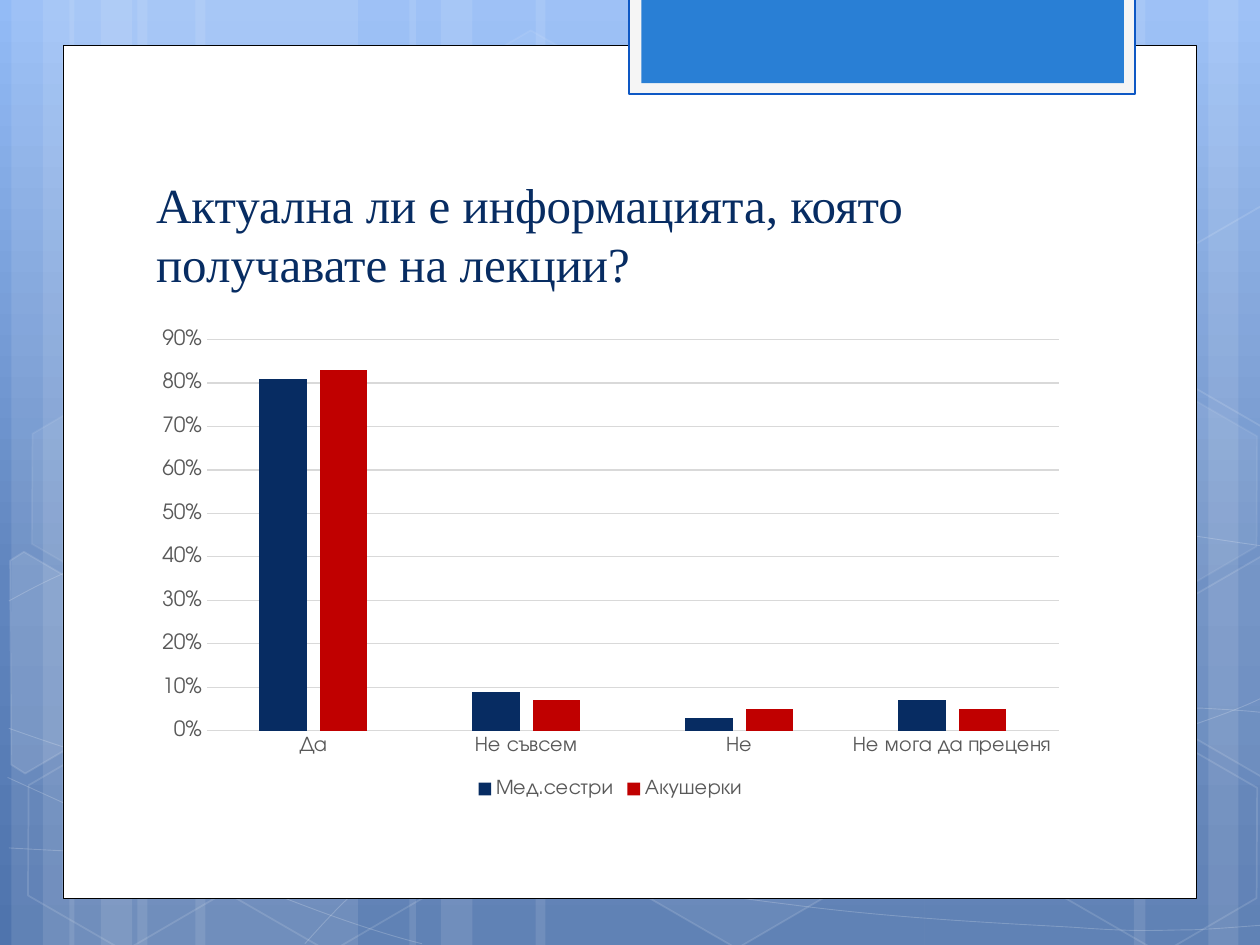
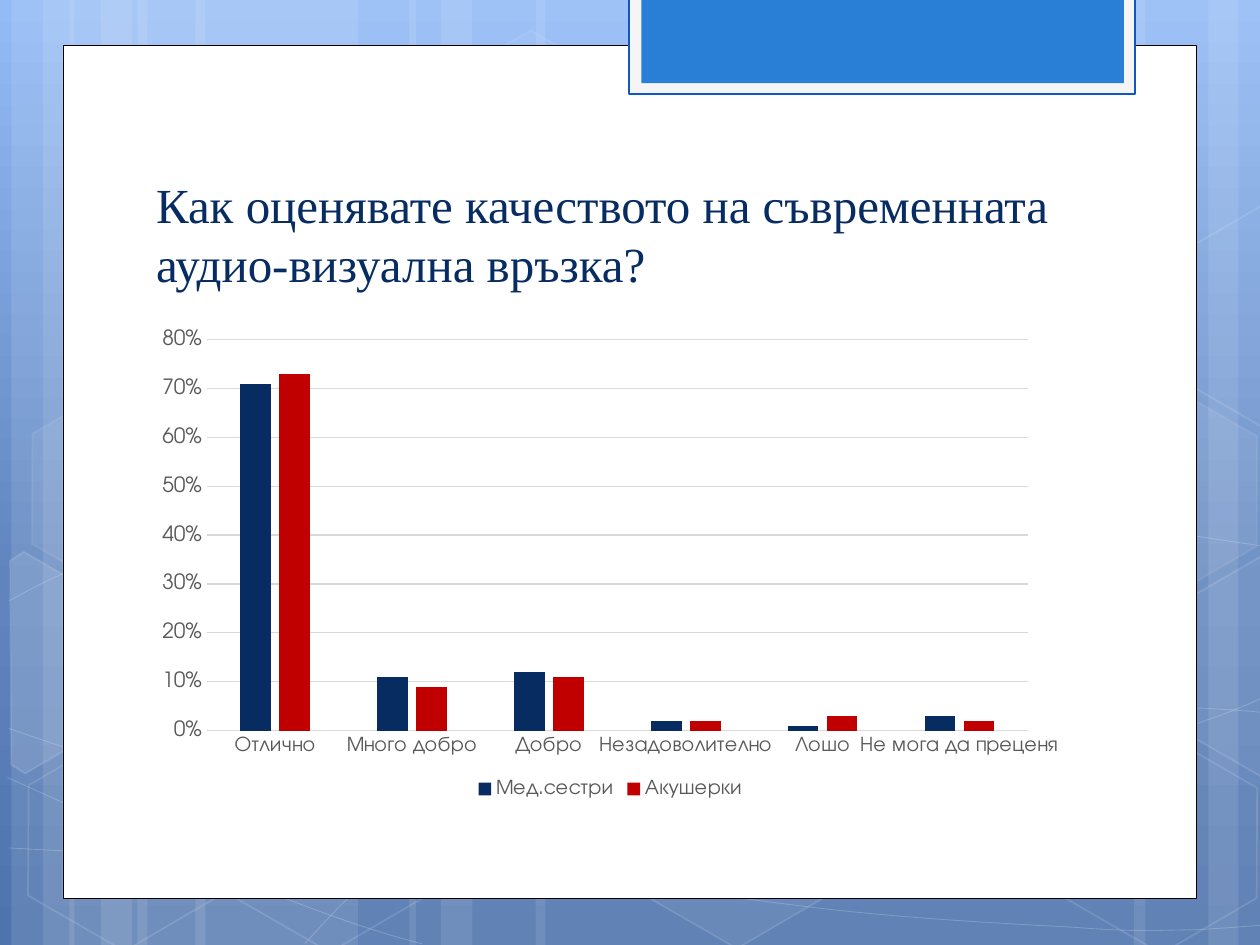
from copy import deepcopy
from dataclasses import dataclass
from typing import Optional

from pptx import Presentation
from pptx.chart.data import CategoryChartData
from pptx.dml.color import RGBColor
from pptx.enum.chart import XL_CHART_TYPE as ChartType
from pptx.enum.chart import XL_LEGEND_POSITION as LegendPosition
from pptx.enum.chart import XL_TICK_MARK as TickMark
from pptx.enum.shapes import MSO_SHAPE as Preset
from pptx.enum.text import MSO_ANCHOR as Anchor
from pptx.oxml.ns import qn
from pptx.oxml.xmlchemy import OxmlElement
from pptx.util import Inches, Pt

WHITE = RGBColor(0xFF, 0xFF, 0xFF)
BLACK = RGBColor(0x00, 0x00, 0x00)
PALE_GREY = RGBColor(0xF5, 0xF5, 0xF5)
GRID_GREY = RGBColor(0xD9, 0xD9, 0xD9)
LABEL_GREY = RGBColor(0x59, 0x59, 0x59)
TAB_BLUE = RGBColor(0x29, 0x7F, 0xD5)
TAB_EDGE = RGBColor(0x0E, 0x58, 0xC4)
NAVY = RGBColor(0x07, 0x2C, 0x62)
RED = RGBColor(0xC0, 0x00, 0x00)
SKY = ((0, RGBColor(0x93, 0xBB, 0xF6)),
       (0.62, RGBColor(0x60, 0x85, 0xBE)),
       (1, RGBColor(0x4F, 0x74, 0xAD)))

TITLE_FONT = "Times New Roman"
CHART_FONT = "TeX Gyre Adventor"
SLIDE_HEIGHT = 7.5

Point = tuple[float, float]
Box = tuple[float, float, float, float]


@dataclass(frozen=True)
class Paint:
    """A colour with its opacity in percent."""
    color: RGBColor
    opacity: int = 100


@dataclass(frozen=True)
class Stroke:
    """A line paint and its width in points."""
    paint: Paint
    width: float


@dataclass(frozen=True)
class Panel:
    """An upright rectangle of the card and its tab."""
    box: Box
    fill: Paint
    stroke: Optional[Stroke] = None


@dataclass(frozen=True)
class Hexagon:
    """A tilted hexagon; opacities are in percent."""
    left: float
    top: float
    edge_opacity: int
    fill_opacity: int = 0


@dataclass(frozen=True)
class CutHexagon:
    """A hexagon cut off by the slide edge."""
    corners: tuple[Point, ...]
    fill_opacity: int = 0


@dataclass(frozen=True)
class Survey:
    """A question and the share of each answer per profession."""
    question: str
    answers: tuple[str, ...]
    nurses: tuple[float, ...]
    midwives: tuple[float, ...]


BAND_GROUP = ((1.09, 1.75), (0.09, 0.5), (0.34, 0.83))
BAND_SHIFT = 0.46
BANDS = (
    *BAND_GROUP,
    *((left + BAND_SHIFT, width) for left, width in BAND_GROUP),
    (7.34, 1.75), (9.59, 0.5), (9, 0.83),
    (4.25, 3.09), (3.25, 0.5), (3.5, 0.83),
)

CURVES: tuple[tuple[Point, ...], ...] = (
    ((0.07, 6.73), (0.61, 6.76), (1.15, 6.79), (1.9, 6.78),
     (2.65, 6.77), (3.58, 6.75), (4.58, 6.65),
     (5.58, 6.55), (7, 6.36), (7.92, 6.17),
     (8.83, 5.98), (9.77, 5.68), (10.07, 5.51)),
    ((0.07, 4.77), (0.36, 4.61), (0.65, 4.46), (1.21, 4.31),
     (1.78, 4.16), (2.59, 3.94), (3.47, 3.87),
     (4.36, 3.8), (5.44, 3.79), (6.54, 3.87),
     (7.64, 3.95), (9.47, 4.26), (10.07, 4.34)),
    ((0.06, 6.17), (1.27, 6.72), (2.47, 7.27), (3.35, 7.49)),
    ((0.07, 5.78), (0.38, 5.89), (0.7, 6), (1.28, 6.16),
     (1.86, 6.31), (2.73, 6.56), (3.57, 6.73),
     (4.4, 6.9), (5.45, 7.08), (6.28, 7.18),
     (7.11, 7.29), (8, 7.33), (8.53, 7.36),
     (9.06, 7.4), (9.19, 7.38), (9.45, 7.38),
     (9.71, 7.37), (9.89, 7.35), (10.07, 7.34)),
    ((2.42, 7.49), (2.6, 7.29), (2.78, 7.09), (3.02, 6.91),
     (3.26, 6.72), (3.6, 6.53), (3.88, 6.39),
     (4.16, 6.25), (4.33, 6.19), (4.69, 6.09),
     (5.06, 5.99), (5.73, 5.85), (6.08, 5.78),
     (6.44, 5.71), (6.49, 5.71), (6.8, 5.69),
     (7.11, 5.66), (7.6, 5.63), (7.94, 5.62),
     (8.29, 5.61), (8.86, 5.62), (8.86, 5.62),
     (9.08, 5.62), (9.31, 5.62), (9.53, 5.62),
     (9.71, 5.63), (9.88, 5.64), (9.97, 5.65),
     (10.06, 5.66), (10.03, 5.65), (10.06, 5.66)),
)

HEXAGONS = (
    Hexagon(3.34, 0.36, 8, 4),
    Hexagon(4.97, 5.89, 12, 6),
    Hexagon(0.11, 5.91, 12),
    Hexagon(0.14, 3.12, 8, 7),
    Hexagon(1.74, 5.92, 12),
    Hexagon(7.53, 4.53, 12, 10),
    Hexagon(8.34, 5.93, 12),
    Hexagon(8.34, 3.14, 8, 7),
)

CUT_HEXAGONS = (
    CutHexagon(((0.08, 4.45), (0.19, 4.38), (0.96, 4.83), (0.95, 5.7),
                (0.2, 6.14), (0.09, 6.07)), 10),
    CutHexagon(((9.26, 4.85), (10.02, 4.41), (10.09, 4.46), (10.09, 6.13),
                (10.02, 6.17), (9.26, 5.73)), 4),
    CutHexagon(((9.26, 2.07), (10.02, 1.63), (10.1, 1.68), (10.09, 3.35),
                (10.02, 3.39), (9.26, 2.95))),
)

PANELS = (
    Panel((0.5, 0.36, 9, 6.77), Paint(WHITE), Stroke(Paint(BLACK), 0.5)),
    Panel((4.99, -0.02, 4.02, 0.77), Paint(PALE_GREY), Stroke(Paint(TAB_EDGE), 1.25)),
    Panel((5.09, -0.02, 3.83, 0.68), Paint(TAB_BLUE)),
)

SURVEYS = (
    Survey("Актуална ли е информацията, която получавате на лекции?",
           ("Да", "Не съвсем", "Не", "Не мога да преценя"),
           (0.81, 0.09, 0.03, 0.07),
           (0.83, 0.07, 0.05, 0.05)),
    Survey("Как оценявате качеството на съвременната аудио-визуална връзка?",
           ("Отлично", "Много добро", "Добро", "Незадоволително", "Лошо",
            "Не мога да преценя"),
           (0.71, 0.11, 0.12, 0.02, 0.01, 0.03),
           (0.73, 0.09, 0.11, 0.02, 0.03, 0.02)),
)


def inches(values) -> list:
    """Turn numbers into lengths."""
    return [Inches(value) for value in values]


def apply_paint(fill, paint: Optional[Paint]) -> None:
    """Fill with a solid paint, or with nothing."""
    if paint is None or paint.opacity == 0:
        fill.background()
        return
    fill.solid()
    fill.fore_color.rgb = paint.color


def style(shape, fill: Optional[Paint], stroke: Optional[Stroke] = None) -> None:
    """Set fill, outline and opacities, without a shadow."""
    shape.shadow.inherit = False
    apply_paint(shape.fill, fill)
    apply_paint(shape.line.fill, stroke.paint if stroke else None)
    if stroke:
        shape.line.width = Pt(stroke.width)
    for paint, query in ((fill, "./p:spPr/a:solidFill/a:srgbClr"),
                         (stroke and stroke.paint, "./p:spPr/a:ln/a:solidFill/a:srgbClr")):
        if paint and 0 < paint.opacity < 100:
            alpha = OxmlElement("a:alpha")
            alpha.set("val", str(paint.opacity * 1000))
            shape.element.xpath(query)[0].append(alpha)


def add_panel(slide, panel: Panel) -> None:
    """Draw one rectangle."""
    style(slide.shapes.add_shape(Preset.RECTANGLE, *inches(panel.box)),
          panel.fill, panel.stroke)


def add_hexagon(slide, hexagon: Hexagon) -> None:
    """Draw one tilted hexagon."""
    shape = slide.shapes.add_shape(
        Preset.HEXAGON, *inches((hexagon.left, hexagon.top, 1.75, 1.52)))
    shape.adjustments[0] = 0.285
    shape.rotation = 30
    style(shape, Paint(WHITE, hexagon.fill_opacity),
          Stroke(Paint(WHITE, hexagon.edge_opacity), 1))


def add_outline(slide, points: tuple[Point, ...], close: bool):
    """Draw a path through points given in inches."""
    start, *rest = [inches(point) for point in points]
    builder = slide.shapes.build_freeform(*start)
    builder.add_line_segments(rest, close=close)
    return builder.convert_to_shape()


def add_curve(slide, knots: tuple[Point, ...]) -> None:
    """Draw a chain of cubic Bezier segments."""
    shape = add_outline(slide, knots, close=False)
    lines = shape.element.xpath(".//a:path/a:lnTo")
    for first in range(0, len(lines), 3):
        segment = OxmlElement("a:cubicBezTo")
        lines[first].addprevious(segment)
        for line in lines[first:first + 3]:
            segment.append(line[0])
            line.getparent().remove(line)
    style(shape, None, Stroke(Paint(WHITE, 20), 0.5))


def paint_background(layout) -> None:
    """Lay the vertical sky gradient."""
    fill = layout.background.fill
    fill.gradient()
    fill.gradient_angle = 270
    stops = next(layout.element.iter(qn("a:gsLst")))
    stops.append(deepcopy(stops[-1]))
    for stop, (position, color) in zip(fill.gradient_stops, SKY):
        stop.position = position
        stop.color.rgb = color


def add_backdrop(slide) -> None:
    """Draw the shared decoration."""
    for left, width in BANDS:
        add_panel(slide, Panel((left, 0, width, SLIDE_HEIGHT), Paint(WHITE, 10)))
    for knots in CURVES:
        add_curve(slide, knots)
    for hexagon in HEXAGONS:
        add_hexagon(slide, hexagon)
    for cut in CUT_HEXAGONS:
        style(add_outline(slide, cut.corners, close=True),
              Paint(WHITE, cut.fill_opacity), Stroke(Paint(WHITE, 12), 1))
    for panel in PANELS:
        add_panel(slide, panel)


def share_backdrop(slide) -> None:
    """Draw the backdrop and move it to the layout of the slide."""
    layout = slide.slide_layout
    paint_background(layout)
    for placeholder in list(layout.placeholders):
        placeholder.element.getparent().remove(placeholder.element)
    add_backdrop(slide)
    tree = layout.element.xpath("./p:cSld/p:spTree")[0]
    for shape in list(slide.shapes):
        tree.append(shape.element)


def set_font(font, name: str, size: float, color: RGBColor) -> None:
    """Set face, size and colour."""
    font.name, font.size, font.color.rgb = name, Pt(size), color


def add_question(slide, question: str) -> None:
    """Write the slide title."""
    frame = slide.shapes.add_textbox(*inches((1.14, 1.12, 7.68, 1.25))).text_frame
    frame.word_wrap = True
    frame.vertical_anchor = Anchor.BOTTOM
    frame.text = question
    set_font(frame.paragraphs[0].font, TITLE_FONT, 28, NAVY)


def add_answers_chart(slide, survey: Survey) -> None:
    """Chart the answers of both professions."""
    data = CategoryChartData(number_format="0%")
    data.categories = survey.answers
    data.add_series("Мед.сестри", survey.nurses)
    data.add_series("Акушерки", survey.midwives)
    chart = slide.shapes.add_chart(
        ChartType.COLUMN_CLUSTERED, *inches((1.14, 2.54, 7.41, 3.84)), data).chart
    set_font(chart.font, CHART_FONT, 10, BLACK)
    chart.has_title = False
    chart.has_legend = True
    chart.legend.position = LegendPosition.BOTTOM
    chart.legend.include_in_layout = False

    plot = chart.plots[0]
    plot.vary_by_categories = False
    plot.gap_width, plot.overlap = 219, -27
    for series, color in zip(plot.series, (NAVY, RED)):
        apply_paint(series.format.fill, Paint(color))

    answers, shares = chart.category_axis, chart.value_axis
    for axis in (answers, shares):
        axis.major_tick_mark = axis.minor_tick_mark = TickMark.NONE
    for labels in (answers.tick_labels, shares.tick_labels, chart.legend):
        set_font(labels.font, CHART_FONT, 12, LABEL_GREY)
    shares.tick_labels.number_format = "0%"
    shares.tick_labels.number_format_is_linked = False
    shares.has_major_gridlines = True
    shares.format.line.fill.background()
    for line in (answers.format.line, shares.major_gridlines.format.line):
        apply_paint(line.fill, Paint(GRID_GREY))
        line.width = Pt(0.75)
    chart.element.xpath(".//c:catAx/c:txPr/a:bodyPr")[0].set("rot", "-60000000")


def main() -> None:
    """Build and save the survey slides."""
    deck = Presentation()
    deck.slide_width, deck.slide_height = Inches(10), Inches(SLIDE_HEIGHT)
    slides = [deck.slides.add_slide(deck.slide_layouts[6]) for _ in SURVEYS]
    share_backdrop(slides[0])
    for slide, survey in zip(slides, SURVEYS):
        add_question(slide, survey.question)
        add_answers_chart(slide, survey)
    deck.save("out.pptx")


if __name__ == "__main__":
    main()
